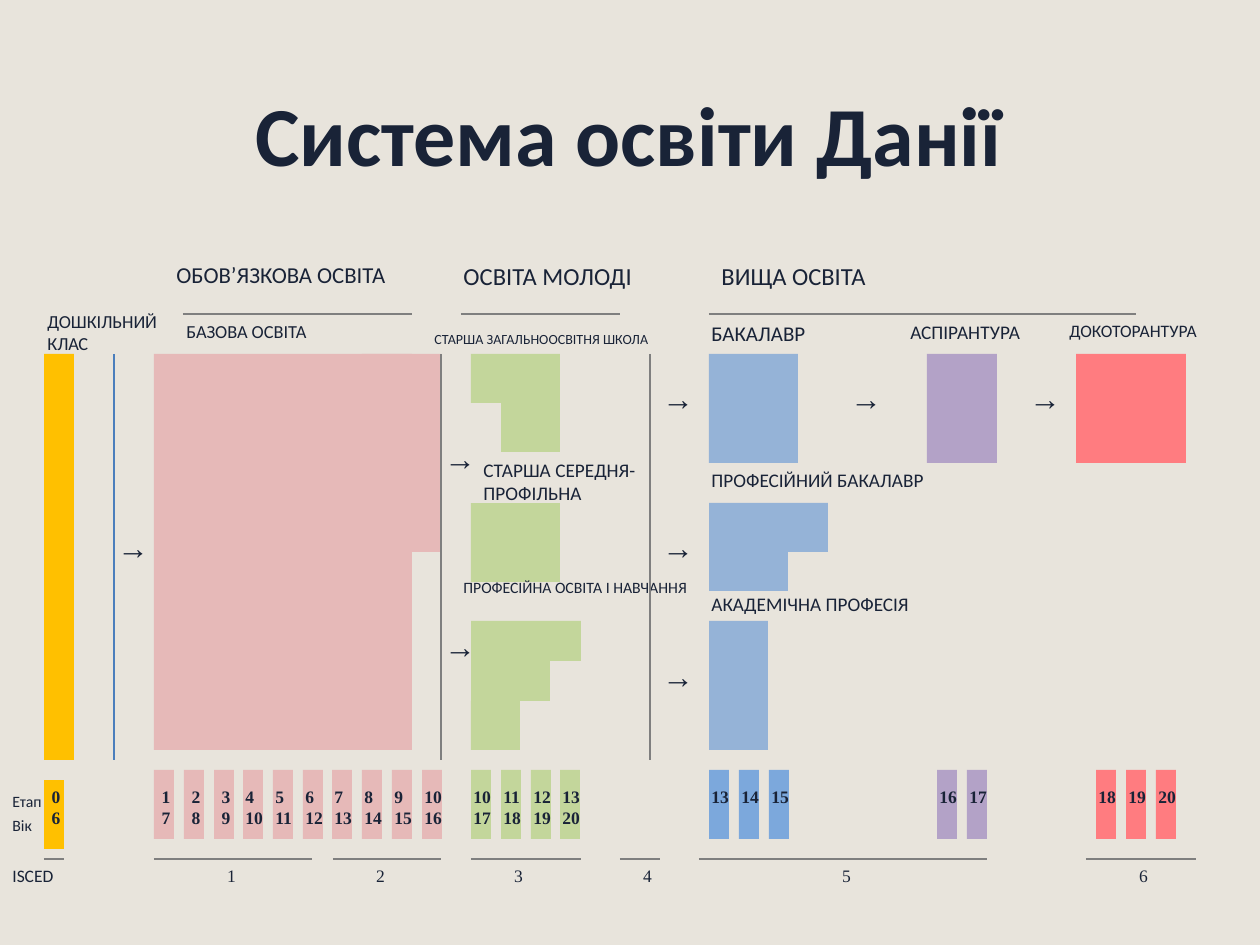
from lxml import etree
from pptx import Presentation
from pptx import util as u
from pptx.dml import color
from pptx.enum import shapes, text
from pptx.oxml import ns

PX = 914400 / 126
INK, RULE, DIVIDER = "192337", "7F7F7F", "4B7EBC"
ORANGE, PINK, GREEN = "FFC000", "E6B9B8", "C3D69B"
BLUE, BAR_BLUE, PURPLE, RED = "95B3D7", "7CA8DC", "B3A2C7", "FF7C80"
SANS, SERIF = "Calibri", "Times New Roman"
YEAR_STEP = 29.75

BLOCKS = [
    (ORANGE, [(44, 354, 30, 406)]),
    (PINK, [(154, 354, 258, 396), (362, 354, 79, 198)]),
    (GREEN, [(471, 354, 89, 49), (501, 403, 59, 49), (471, 503, 89, 79),
             (471, 621, 110, 40), (471, 661, 79, 40), (471, 701, 49, 49)]),
    (BLUE, [(709, 354, 89, 109), (709, 503, 119, 49), (709, 552, 79, 39),
            (709, 621, 59, 129)]),
    (PURPLE, [(927, 354, 70, 109)]),
    (RED, [(1076, 354, 110, 109)]),
]

HEADINGS = [
    ("ОБОВ’ЯЗКОВА ОСВІТА", 164, 255, 248, 40, 13),
    ("ОСВІТА МОЛОДІ", 451, 255, 248, 43, 14),
    ("ВИЩА ОСВІТА", 709, 255, 248, 43, 14),
    ("БАЗОВА ОСВІТА", 174, 314, 248, 35, 10.5),
    ("СТАРША ЗАГАЛЬНООСВІТНЯ ШКОЛА", 422, 324, 248, 30, 8),
    ("БАКАЛАВР", 699, 314, 248, 38, 12),
    ("АСПІРАНТУРА", 898, 314, 248, 37, 11),
    ("ДОКОТОРАНТУРА", 1057, 314, 164, 35, 10),
    ("СТАРША СЕРЕДНЯ-ПРОФІЛЬНА", 471, 452, 248, 59, 11),
    ("ПРОФЕСІЙНИЙ БАКАЛАВР", 699, 462, 248, 37, 11),
    ("ДОШКІЛЬНИЙ\nКЛАС", 35, 304, 248, 57, 10.5),
    ("ПРОФЕСІЙНА ОСВІТА І НАВЧАННЯ", 451, 572, 252, 50, 9),
    ("АКАДЕМІЧНА ПРОФЕСІЯ", 699, 586, 248, 37, 11),
    ("Етап", 0, 786, 64, 32, 9),
    ("Вік", 0, 810, 54, 32, 9),
    ("ISCED", 0, 859, 95, 34, 10),
]

HEADING_RULES = [(183, 412), (461, 620), (709, 1136)]
ISCED_RULES = [(44, 64), (154, 312), (333, 441), (471, 581), (620, 660),
               (699, 987), (1086, 1196)]
ISCED_LEFTS = [184, 333, 471, 600, 799, 1096]
DIVIDERS = [(114, DIVIDER, 1.25), (441, RULE, 0.75), (650, RULE, 0.75)]
ARROWS = [(105, 522), (432, 433), (432, 621), (650, 373), (650, 522),
          (650, 651), (838, 373), (1017, 373)]

YEAR_GROUPS = [
    (44, 780, ORANGE, 0, 1, 6),
    (154, 770, PINK, 1, 10, 7),
    (471, 770, GREEN, 10, 4, 17),
    (709, 770, BAR_BLUE, 13, 3, None),
    (937, 770, PURPLE, 16, 2, None),
    (1096, 770, RED, 18, 3, None),
]


def px(*lengths):
    return [u.Emu(round(length * PX)) for length in lengths]


def rgb(value):
    return color.RGBColor.from_string(value)


def add_block(slide, box, fill):
    block = slide.shapes.add_shape(shapes.MSO_SHAPE.RECTANGLE, *px(*box))
    block.shadow.inherit = False
    block.fill.solid()
    block.fill.fore_color.rgb = rgb(fill)
    block.line.fill.background()


def add_rule(slide, start, end, stroke=RULE, width=0.75):
    rule = slide.shapes.add_connector(
        shapes.MSO_CONNECTOR.STRAIGHT, *px(*start, *end))
    rule.line.color.rgb = rgb(stroke)
    rule.line.width = u.Pt(width)
    etree.SubElement(rule._element.spPr, ns.qn("a:effectLst"))


def add_label(slide, words, box, size, font=SANS, bold=False, align=None):
    label = slide.shapes.add_textbox(*px(*box))
    frame = label.text_frame
    frame.word_wrap = True
    frame.auto_size = text.MSO_AUTO_SIZE.SHAPE_TO_FIT_TEXT
    frame.text = words
    font_format = {"name": font, "size": u.Pt(size), "bold": bold}
    for paragraph in frame.paragraphs:
        paragraph.alignment = align
        for run in paragraph.runs:
            for attribute, value in font_format.items():
                setattr(run.font, attribute, value)
            run.font.color.rgb = rgb(INK)


def add_year_group(slide, left, top, fill, first_stage, count, first_age):
    for year in range(count):
        bar_left = left + round(year * YEAR_STEP)
        add_block(slide, (bar_left, top, 20, 69), fill)
    for year in range(count):
        bar_left = left + round(year * YEAR_STEP)
        words = str(first_stage + year)
        label_left, width, height = bar_left - 10, 49, 34
        if first_age is not None:
            age = first_age + year
            words += f"\n{age}"
            height = 55
            if age < 10:
                label_left, width = bar_left, 20
        add_label(slide, words, (label_left, 780, width, height), 10, SERIF, True)


def main():
    deck = Presentation()
    deck.slide_width, deck.slide_height = px(1260, 945)
    slide = deck.slides.add_slide(deck.slide_layouts[6])
    slide.background.fill.solid()
    slide.background.fill.fore_color.rgb = rgb("E8E4DC")

    for fill, boxes in BLOCKS:
        for box in boxes:
            add_block(slide, box, fill)
    for words, *box, size in HEADINGS:
        add_label(slide, words, box, size)
    for rules, top in ((HEADING_RULES, 314), (ISCED_RULES, 859)):
        for left, right in rules:
            add_rule(slide, (left, top), (right, top))
    for left, stroke, width in DIVIDERS:
        add_rule(slide, (left, 354), (left, 760), stroke, width)
    for left, top in ARROWS:
        add_label(slide, "→", (left, top, 49, 50), 18, SERIF)
    for group in YEAR_GROUPS:
        add_year_group(slide, *group)
    for level, left in enumerate(ISCED_LEFTS, 1):
        add_label(slide, str(level), (left, 859, 95, 34), 10, SERIF,
                  align=text.PP_ALIGN.CENTER)
    add_label(slide, "Система освіти Данії", (243, 76, 789, 115), 48, bold=True)

    deck.save("out.pptx")


if __name__ == "__main__":
    main()
